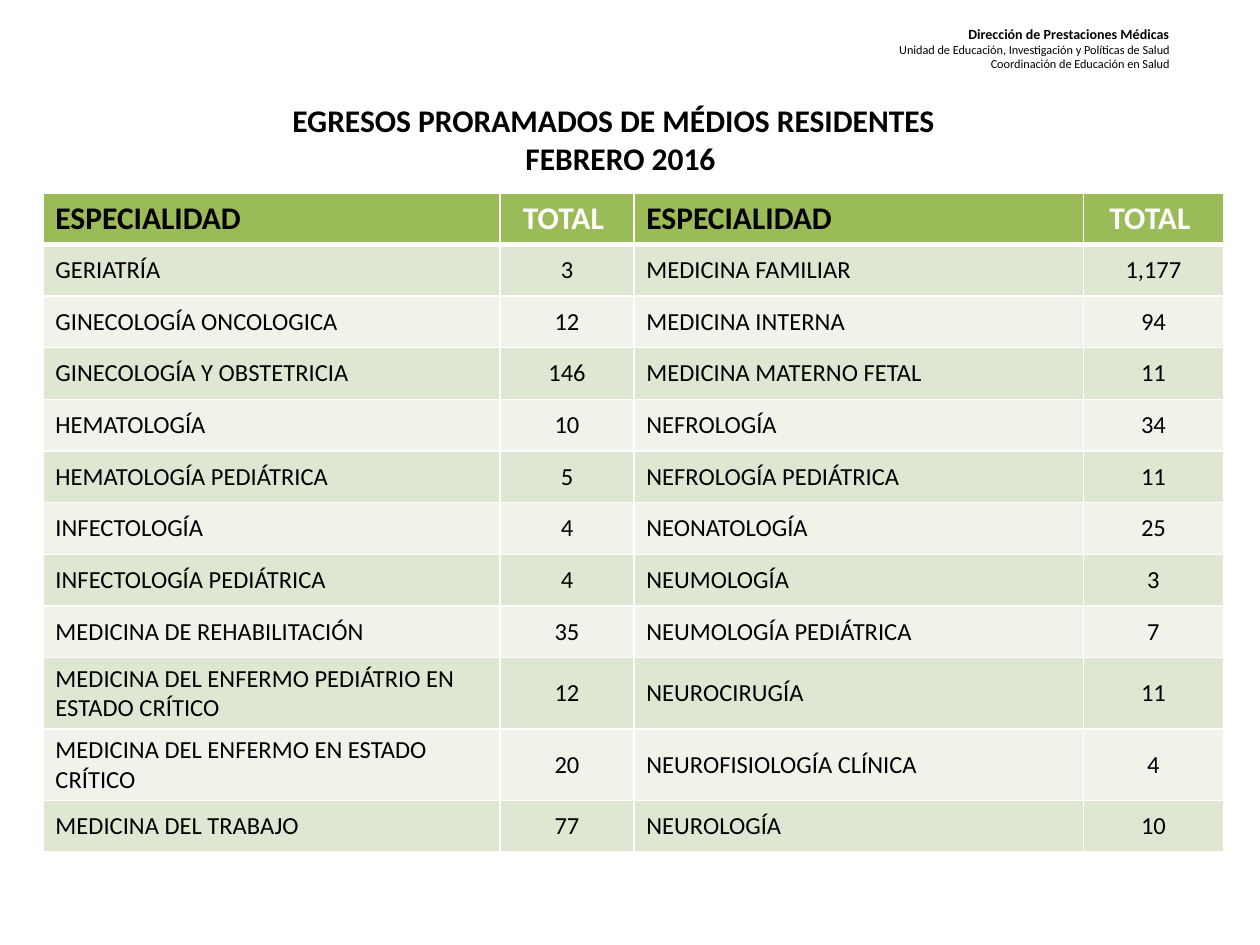
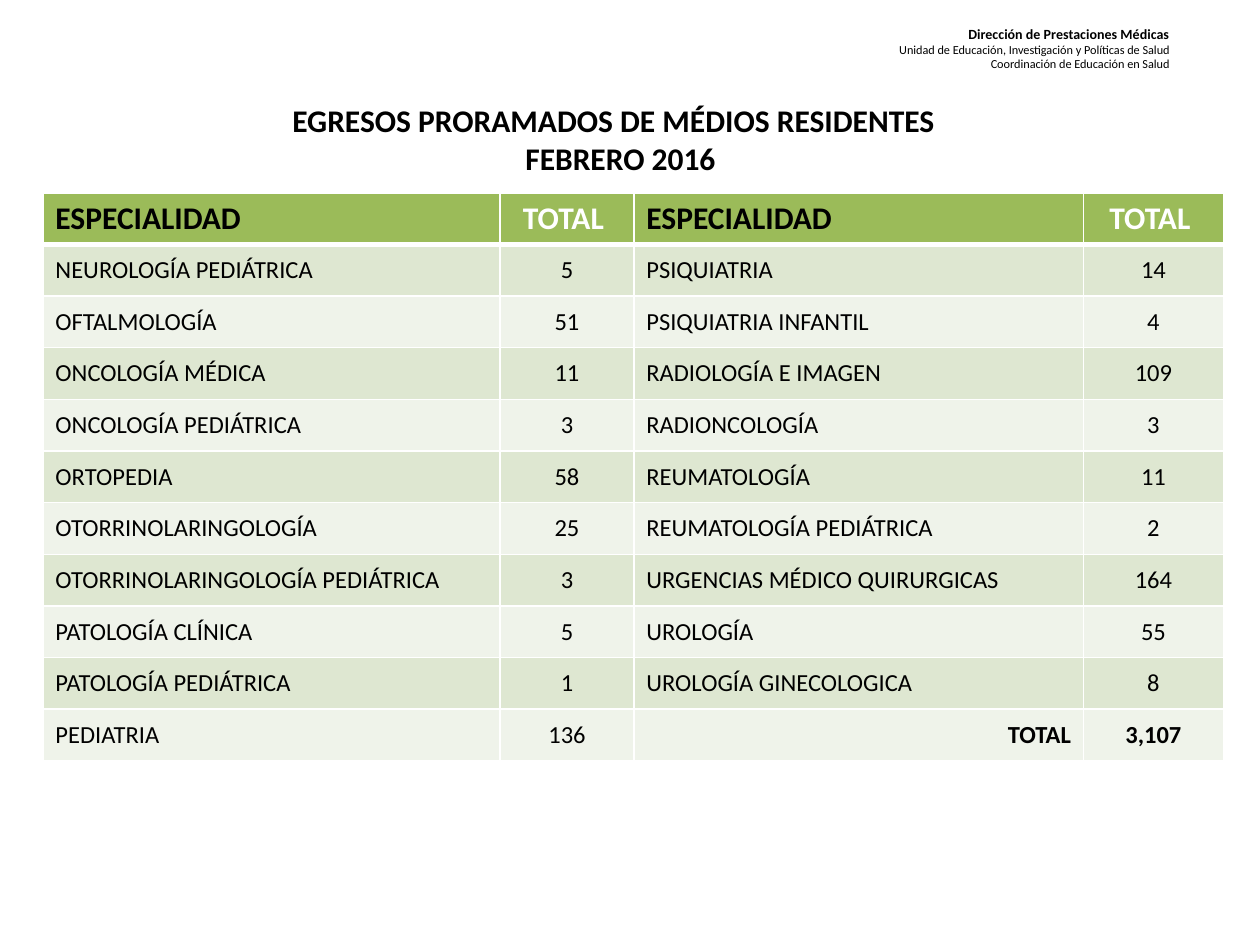
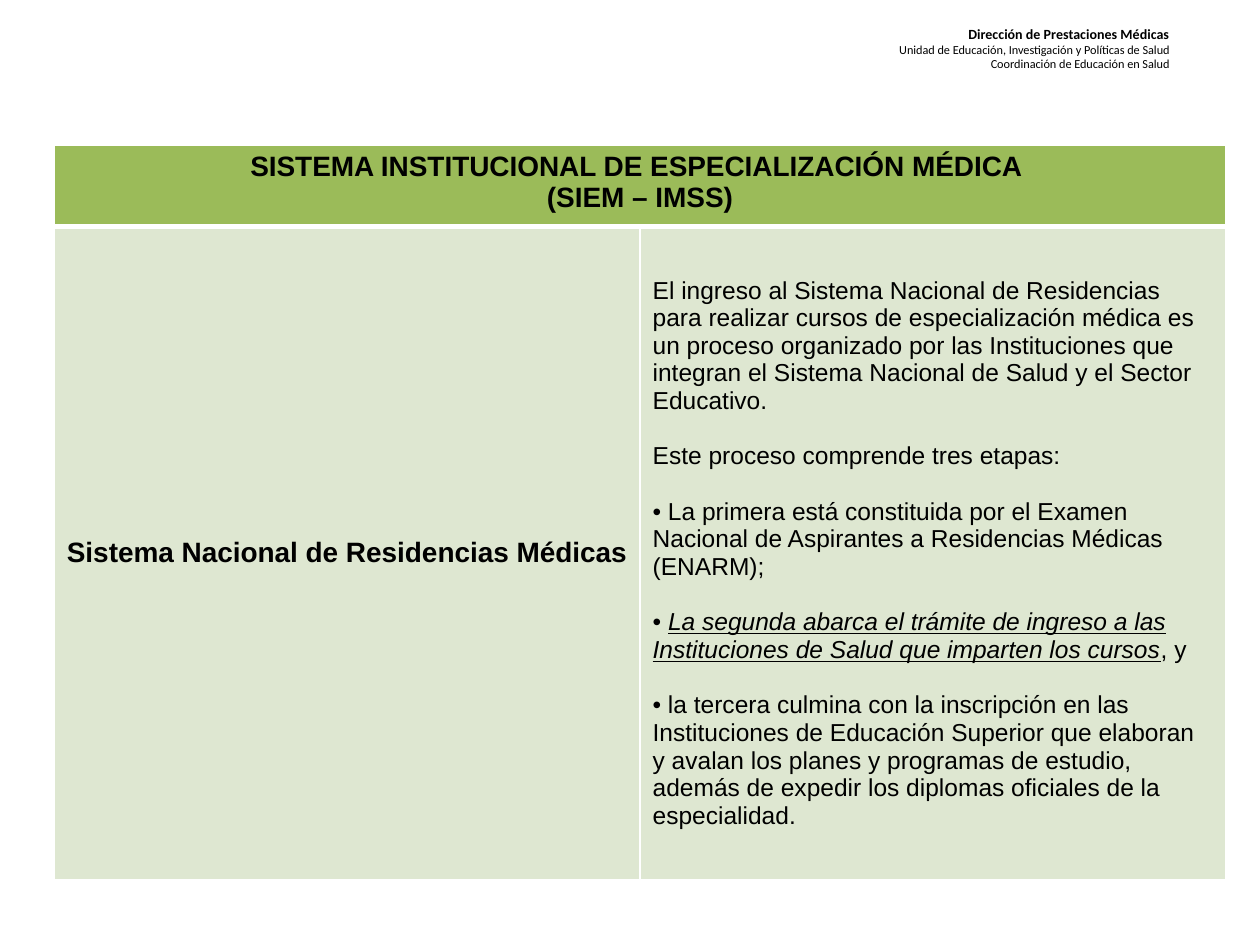
from pptx import Presentation
from pptx.dml.color import RGBColor
from pptx.enum.text import MSO_ANCHOR as Anchor, MSO_AUTO_SIZE as AutoSize, PP_ALIGN as Align
from pptx.oxml.ns import qn
from pptx.util import Emu, Pt
from lxml.etree import SubElement

EMU_PER_PX = 9144
COLORS = {
    "text": "000000",
    "white": "FFFFFF",
    "header": "9BBB59",
    "odd_row": "DEE7D1",
    "even_row": "EFF3EA",
}
TITLE_LAYOUT = 5
BLANK_LAYOUT = 6

AREA_LINES = [
    ("Dirección de Prestaciones Médicas", 8, True),
    ("Unidad de Educación, Investigación y Políticas de Salud", 7, False),
    ("Coordinación de Educación en Salud", 7, False),
]
TITLE_LINES = ["EGRESOS PRORAMADOS DE MÉDIOS RESIDENTES", "FEBRERO 2016"]
GRADUATE_HEADINGS = ("ESPECIALIDAD", "TOTAL ", "ESPECIALIDAD", "TOTAL ")
GRADUATE_WIDTHS = [363, 106, 357, 111]

GRADUATES_G_TO_N = [
    ("GERIATRÍA", "3", "MEDICINA FAMILIAR", "1,177"),
    ("GINECOLOGÍA ONCOLOGICA", "12", "MEDICINA INTERNA", "94"),
    ("GINECOLOGÍA Y OBSTETRICIA", "146", "MEDICINA MATERNO FETAL", "11"),
    ("HEMATOLOGÍA", "10", "NEFROLOGÍA", "34"),
    ("HEMATOLOGÍA PEDIÁTRICA", "5", "NEFROLOGÍA PEDIÁTRICA", "11"),
    ("INFECTOLOGÍA", "4", "NEONATOLOGÍA", "25"),
    ("INFECTOLOGÍA PEDIÁTRICA", "4", "NEUMOLOGÍA", "3"),
    ("MEDICINA DE REHABILITACIÓN", "35", "NEUMOLOGÍA PEDIÁTRICA", "7"),
    ("MEDICINA DEL ENFERMO PEDIÁTRIO EN ESTADO CRÍTICO", "12", "NEUROCIRUGÍA", "11"),
    ("MEDICINA DEL ENFERMO EN ESTADO CRÍTICO", "20", "NEUROFISIOLOGÍA CLÍNICA", "4"),
    ("MEDICINA DEL TRABAJO", "77", "NEUROLOGÍA", "10"),
]
GRADUATES_N_TO_U = [
    ("NEUROLOGÍA PEDIÁTRICA", "5", "PSIQUIATRIA", "14"),
    ("OFTALMOLOGÍA", "51", "PSIQUIATRIA INFANTIL", "4"),
    ("ONCOLOGÍA MÉDICA", "11", "RADIOLOGÍA E IMAGEN", "109"),
    ("ONCOLOGÍA PEDIÁTRICA", "3", "RADIONCOLOGÍA", "3"),
    ("ORTOPEDIA", "58", "REUMATOLOGÍA", "11"),
    ("OTORRINOLARINGOLOGÍA", "25", "REUMATOLOGÍA PEDIÁTRICA", "2"),
    ("OTORRINOLARINGOLOGÍA PEDIÁTRICA", "3", "URGENCIAS MÉDICO QUIRURGICAS", "164"),
    ("PATOLOGÍA CLÍNICA", "5", "UROLOGÍA", "55"),
    ("PATOLOGÍA PEDIÁTRICA", "1", "UROLOGÍA GINECOLOGICA", "8"),
    ("PEDIATRIA", "136", "TOTAL", "3,107"),
]

SYSTEM_HEADING = ["SISTEMA INSTITUCIONAL DE ESPECIALIZACIÓN MÉDICA ", "(SIEM – IMSS)"]
SYSTEM_NAME = ["Sistema Nacional de Residencias Médicas"]
SYSTEM_INTRO = [
    "El ingreso al Sistema Nacional de Residencias para realizar cursos de especialización "
    "médica es un proceso organizado por las Instituciones que integran el Sistema Nacional "
    "de Salud y el Sector Educativo.",
    "Este proceso comprende tres etapas:",
]
SYSTEM_STAGES = [
    " La primera está constituida por el Examen Nacional de Aspirantes a Residencias "
    "Médicas (ENARM);",
    " ",
    " la tercera culmina con la inscripción en las Instituciones de Educación Superior que "
    "elaboran y avalan los planes y programas de estudio, además de expedir los diplomas "
    "oficiales de la especialidad.",
]
SECOND_STAGE = "La segunda abarca el trámite de ingreso a las Instituciones de Salud que imparten los cursos"


def px(length):
    return Emu(length * EMU_PER_PX)


def format_runs(paragraph, size, bold=False, font="Calibri", color="text"):
    for run in paragraph.runs:
        run.font.name = font
        run.font.size = Pt(size)
        run.font.bold = bold
        run.font.color.rgb = RGBColor.from_string(COLORS[color])


def write_lines(text_frame, lines, align, **style):
    text_frame.text = "\n".join(lines)
    for paragraph in text_frame.paragraphs:
        paragraph.alignment = align
        format_runs(paragraph, **style)


def move_area_to_master(presentation, slide):
    box = slide.shapes.add_textbox(px(669), px(15), px(269), px(62))
    text_frame = box.text_frame
    text_frame.word_wrap = True
    text_frame.text = "\n".join(text for text, _, _ in AREA_LINES)
    for paragraph, (_, size, bold) in zip(text_frame.paragraphs, AREA_LINES):
        paragraph.alignment = Align.RIGHT
        format_runs(paragraph, size, bold)
    box.element.xpath(".//p:cNvPr")[0].set("id", "99")
    presentation.slide_master.shapes.element.append(box.element)


def add_title(slide):
    title = slide.shapes.title
    title.left, title.top, title.width, title.height = px(222), px(75), px(541), px(71)
    text_frame = title.text_frame
    write_lines(text_frame, TITLE_LINES, Align.CENTER, size=18, bold=True)
    text_frame.paragraphs[0].alignment = Align.LEFT
    text_frame.word_wrap = False
    text_frame.auto_size = AutoSize.SHAPE_TO_FIT_TEXT
    text_frame.vertical_anchor = Anchor.TOP


def add_borders(cell, top, bottom):
    properties = cell._tc.get_or_add_tcPr()
    for side, points in (("L", 1), ("R", 1), ("T", top), ("B", bottom)):
        line = SubElement(properties, qn(f"a:ln{side}"), w=str(Pt(points)))
        fill = SubElement(line, qn("a:solidFill"))
        SubElement(fill, qn("a:srgbClr"), val=COLORS["white"])


def add_table(slide, left, top, widths, heights):
    frame = slide.shapes.add_table(
        len(heights), len(widths), px(left), px(top), px(sum(widths)), px(sum(heights))
    )
    table = frame.table
    table.horz_banding = False
    for column, width in zip(table.columns, widths):
        column.width = px(width)
    for index, (row, height) in enumerate(zip(table.rows, heights)):
        row.height = px(height)
        fill_name = "header" if index == 0 else ("even_row", "odd_row")[index % 2]
        for cell in row.cells:
            add_borders(cell, 3 if index == 1 else 1, 3 if index == 0 else 1)
            cell.fill.solid()
            cell.fill.fore_color.rgb = RGBColor.from_string(COLORS[fill_name])
            cell.vertical_anchor = Anchor.TOP if index == 0 else Anchor.MIDDLE
    return table


def add_graduates_table(slide, rows):
    table = add_table(slide, 34, 153, GRADUATE_WIDTHS, [41] * (len(rows) + 1))
    for row_index, values in enumerate([GRADUATE_HEADINGS, *rows]):
        is_heading = row_index == 0
        for column_index, value in enumerate(values):
            is_count = column_index % 2 == 1
            is_sum = values[2] == "TOTAL" and column_index >= 2
            align = Align.CENTER if is_count else Align.RIGHT if is_sum else Align.LEFT
            write_lines(
                table.cell(row_index, column_index).text_frame, [value], align,
                size=18 if is_heading else 14,
                bold=is_heading or is_sum,
                color="white" if is_heading and is_count else "text",
            )


def add_bullet(paragraph):
    properties = paragraph._p.get_or_add_pPr()
    properties.set("marL", "0")
    properties.set("indent", "0")
    SubElement(properties, qn("a:buFont"), typeface="Arial")
    SubElement(properties, qn("a:buChar"), char="•")


def add_system_table(slide):
    table = add_table(slide, 43, 115, [465, 465], [65, 518])
    heading, name, process = table.cell(0, 0), table.cell(1, 0), table.cell(1, 1)
    heading.merge(table.cell(0, 1))
    for cell, lines in ((heading, SYSTEM_HEADING), (name, SYSTEM_NAME)):
        write_lines(cell.text_frame, lines, Align.CENTER, size=16, bold=True, font="Arial")

    text_frame = process.text_frame
    write_lines(text_frame, SYSTEM_INTRO + SYSTEM_STAGES, Align.LEFT, size=14, font="Arial")
    paragraphs = text_frame.paragraphs
    for paragraph in paragraphs[1:]:
        paragraph.space_before = Pt(16)
    stages = paragraphs[len(SYSTEM_INTRO):]
    for paragraph in stages:
        add_bullet(paragraph)
    for text, emphasis in ((SECOND_STAGE, True), (", y", False)):
        run = stages[1].add_run()
        run.text = text
        run.font.italic = emphasis
        run.font.underline = emphasis
    format_runs(stages[1], 14, font="Arial")


def main():
    presentation = Presentation()
    presentation.slide_width, presentation.slide_height = px(1000), px(750)
    layouts = presentation.slide_layouts

    for rows in (GRADUATES_G_TO_N, GRADUATES_N_TO_U):
        slide = presentation.slides.add_slide(layouts[TITLE_LAYOUT])
        add_title(slide)
        add_graduates_table(slide, rows)

    slide = presentation.slides.add_slide(layouts[BLANK_LAYOUT])
    add_system_table(slide)
    move_area_to_master(presentation, slide)
    presentation.save("out.pptx")


if __name__ == "__main__":
    main()
